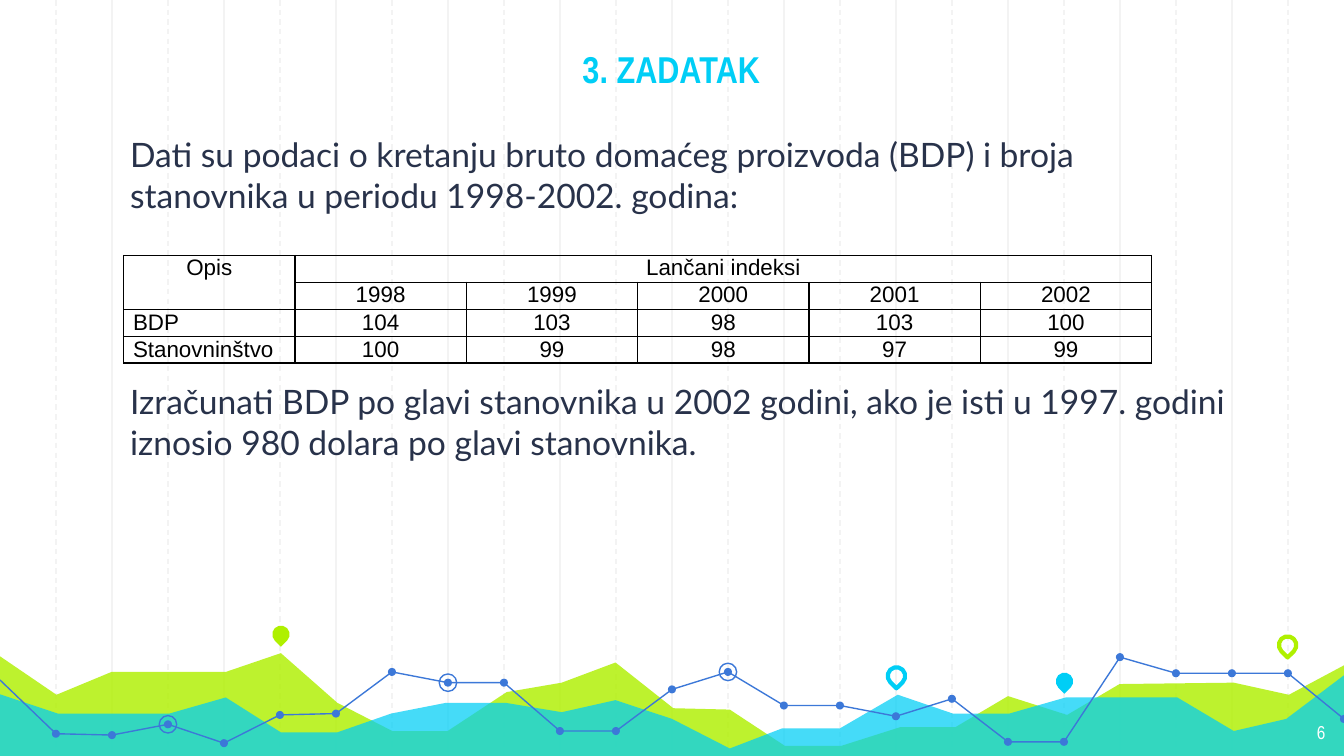
from dataclasses import dataclass

import pptx
import pptx.dml.color
import pptx.enum.dml
import pptx.enum.shapes
import pptx.enum.text
import pptx.oxml
import pptx.oxml.ns
import pptx.util

Inches = pptx.util.Inches
Pt = pptx.util.Pt
SHAPE = pptx.enum.shapes.MSO_SHAPE
ALIGN = pptx.enum.text.PP_ALIGN
ANCHOR = pptx.enum.text.MSO_ANCHOR


@dataclass(frozen=True)
class Theme:
    grid: str = "F3F3F3"
    lime: str = "AFF000"
    cyan: str = "00CEF6"
    blue: str = "3C78D8"
    ink: str = "28324A"
    white: str = "FFFFFF"
    black: str = "000000"
    heading_font: str = "Arial Narrow"
    body_font: str = "Lato"
    table_font: str = "Arial"
    title_size: int = 20
    body_size: int = 18
    table_size: int = 12
    number_size: int = 10
    thin: float = 0.75
    thick: float = 2.25


THEME = Theme()
STEP = 10 / 24  # distance between neighbouring grid lines

LIME_RIDGE = [
    (-0.02, 4.87), (0.42, 5.17), (0.83, 5), (1.68, 5), (2.09, 4.86), (2.51, 5.23),
    (2.92, 5.44), (3.33, 5.44), (3.77, 5.15), (4.18, 5.08), (4.58, 4.93), (5.01, 5.27),
    (5.43, 5.28), (5.84, 5.55), (6.26, 5.55), (6.7, 5.41), (7.11, 5.41), (7.5, 5.18),
    (7.94, 5.32), (8.33, 5.09), (9.18, 5.08), (9.59, 5.17), (10.02, 4.94)]
CYAN_RIDGE = [
    (-0.02, 5.16), (0.43, 5.31), (1.26, 5.31), (1.68, 5.19), (2.09, 5.45), (2.51, 5.45),
    (2.91, 5.31), (3.32, 5.23), (3.76, 5.23), (4.18, 5.3), (4.58, 5.21), (5, 5.35),
    (5.43, 5.57), (5.82, 5.42), (6.25, 5.42), (6.68, 5.17), (7.09, 5.31), (7.51, 5.31),
    (7.93, 5.19), (8.76, 5.19), (9.18, 5.44), (9.57, 5.35), (10.02, 5.01)]
TREND_HEIGHTS = [
    5.06, 5.46, 5.47, 5.39, 5.53, 5.32, 5.31, 5, 5.08, 5.08, 5.44, 5.44, 5.13,
    5, 5.25, 5.25, 5.33, 5.2, 5.52, 5.52, 4.89, 5.01, 5.01, 5.01, 5.35]
TREND_PARTS = [(0, 11), (11, 20), (20, 24)]
RINGED_POINTS = [3, 8, 13]

INDEX_ROWS = [
    ["Opis", "Lančani indeksi", "", "", "", ""],
    ["", "1998", "1999", "2000", "2001", "2002"],
    ["BDP", "104", "103", "98", "103", "100"],
    ["Stanovninštvo", "100", "99", "98", "97", "99"]]


def rgb(color):
    return pptx.dml.color.RGBColor.from_string(color)


def style_shape(shape, fill=None, line=None, width=THEME.thin):
    shape.shadow.inherit = False
    if fill:
        shape.fill.solid()
        shape.fill.fore_color.rgb = rgb(fill)
    else:
        shape.fill.background()
    if line:
        shape.line.color.rgb = rgb(line)
        shape.line.width = Pt(width)
    else:
        shape.line.fill.background()


def style_paragraph(para, font, size, color, align=ALIGN.LEFT, bold=False):
    para.alignment = align
    para.font.name = font
    para.font.size = Pt(size)
    para.font.color.rgb = rgb(color)
    para.font.bold = bold


def add_grid_line(page, index):
    x = Inches(index * STEP)
    line = page.shapes.add_connector(
        pptx.enum.shapes.MSO_CONNECTOR.STRAIGHT, x, 0, x, Inches(5.65))
    line.line.color.rgb = rgb(THEME.grid)
    line.line.width = Pt(THEME.thin)
    if index % 2:
        line.line.dash_style = pptx.enum.dml.MSO_LINE.DASH
    line._element.spPr.append(pptx.oxml.parse_xml(
        f'<a:effectLst {pptx.oxml.ns.nsdecls("a")}/>'))


def add_path(page, points, close):
    start, *rest = [(Inches(x), Inches(y)) for x, y in points]
    builder = page.shapes.build_freeform(*start)
    builder.add_line_segments(rest, close=close)
    return builder.convert_to_shape()


def add_area(page, ridge, color, opacity):
    """Fill the space below a ridge with a see-through colour."""
    area = add_path(page, ridge + [(10.02, 5.65), (-0.03, 5.65)], True)
    style_shape(area, fill=color)
    tint = area._element.spPr.find(".//" + pptx.oxml.ns.qn("a:srgbClr"))
    tint.append(pptx.oxml.parse_xml(
        f'<a:alpha {pptx.oxml.ns.nsdecls("a")} val="{opacity * 1000}"/>'))


def add_marker(page, kind, center, size, **style):
    x, y = center
    marker = page.shapes.add_shape(
        kind, Inches(x - size / 2), Inches(y - size / 2), Inches(size), Inches(size))
    style_shape(marker, **style)
    return marker


def add_pin(page, x, y, **style):
    pin = add_marker(page, SHAPE.TEAR, (x, y), 0.13, width=THEME.thick, **style)
    pin.rotation = 135


def add_trend(page):
    points = [(index * STEP, y) for index, y in enumerate(TREND_HEIGHTS)]
    for first, last in TREND_PARTS:
        part = add_path(page, points[first:last + 1], False)
        style_shape(part, line=THEME.blue)
    for point in points[1:]:
        add_marker(page, SHAPE.OVAL, point, 0.06, fill=THEME.blue)
    for index in RINGED_POINTS:
        add_marker(page, SHAPE.OVAL, points[index], 0.13, line=THEME.blue)


def add_text(page, place, texts, anchor=ANCHOR.TOP, **style):
    box = page.shapes.add_textbox(*[Inches(length) for length in place])
    frame = box.text_frame
    frame.word_wrap = True
    frame.vertical_anchor = anchor
    frame.margin_left = frame.margin_right = Inches(0.1)
    frame.margin_top = frame.margin_bottom = Inches(0.1)
    frame.text = "\n".join(texts)
    for para in frame.paragraphs:
        style_paragraph(para, **style)
    return frame


def add_borders(cell):
    properties = cell._tc.get_or_add_tcPr()
    for side in ("lnL", "lnR", "lnT", "lnB"):
        properties.append(pptx.oxml.parse_xml(
            f'<a:{side} {pptx.oxml.ns.nsdecls("a")} w="{Pt(THEME.thin)}"><a:solidFill>'
            f'<a:srgbClr val="{THEME.black}"/></a:solidFill></a:{side}>'))


def add_index_table(page):
    table = page.shapes.add_table(
        len(INDEX_ROWS), len(INDEX_ROWS[0]),
        Inches(0.92), Inches(1.9), Inches(7.65), Inches(0.8)).table
    table.first_row = table.horz_banding = False
    for r, row in enumerate(INDEX_ROWS):
        for c, text in enumerate(row):
            cell = table.cell(r, c)
            cell.text = text
            cell.margin_left = cell.margin_right = Inches(0.07)
            cell.margin_top = cell.margin_bottom = 0
            cell.vertical_anchor = ANCHOR.TOP if r < 2 else ANCHOR.MIDDLE
            align = ALIGN.LEFT if r >= 2 and c == 0 else ALIGN.CENTER
            style_paragraph(cell.text_frame.paragraphs[0], THEME.table_font,
                            THEME.table_size, THEME.black, align)
            add_borders(cell)
            cell.fill.background()
    table.cell(0, 0).merge(table.cell(1, 0))
    table.cell(0, 1).merge(table.cell(0, 5))


def main():
    deck = pptx.Presentation()
    deck.slide_width = Inches(10)
    deck.slide_height = deck.slide_width * 9 // 16
    page = deck.slides.add_slide(deck.slide_layouts[6])

    for index in [*range(2, 24, 2), *range(1, 24, 2)]:
        add_grid_line(page, index)
    add_area(page, LIME_RIDGE, THEME.lime, 82)
    add_area(page, CYAN_RIDGE, THEME.cyan, 73)
    add_pin(page, 2.09, 4.72, fill=THEME.lime)
    add_pin(page, 6.67, 5.03, line=THEME.cyan)
    add_pin(page, 7.92, 5.07, fill=THEME.cyan)
    add_pin(page, 9.58, 4.8, line=THEME.lime)
    add_trend(page)

    add_text(page, (9.36, 5.28, 0.6, 0.35), ["6"], font=THEME.heading_font,
             size=THEME.number_size, color=THEME.white, align=ALIGN.RIGHT)
    body = add_text(page, (0.74, 0.9, 8.5, 3.33), [
        "Dati su podaci o kretanju bruto domaćeg proizvoda (BDP) i broja "
        "stanovnika u periodu 1998-2002. godina:",
        "Izračunati BDP po glavi stanovnika u 2002 godini, ako je isti u 1997. godini "
        "iznosio 980 dolara po glavi stanovnika."],
        font=THEME.body_font, size=THEME.body_size, color=THEME.ink)
    for para in body.paragraphs:
        para._p.get_or_add_pPr().set("marL", str(Inches(0.13)))
    body.paragraphs[1].space_before = Pt(89)  # room for the table
    add_text(page, (1.17, 0, 7.65, 0.78), ["3. ZADATAK"], ANCHOR.BOTTOM,
             font=THEME.heading_font, size=THEME.title_size, color=THEME.cyan,
             align=ALIGN.CENTER, bold=True)
    add_index_table(page)
    deck.save("out.pptx")


if __name__ == "__main__":
    main()
